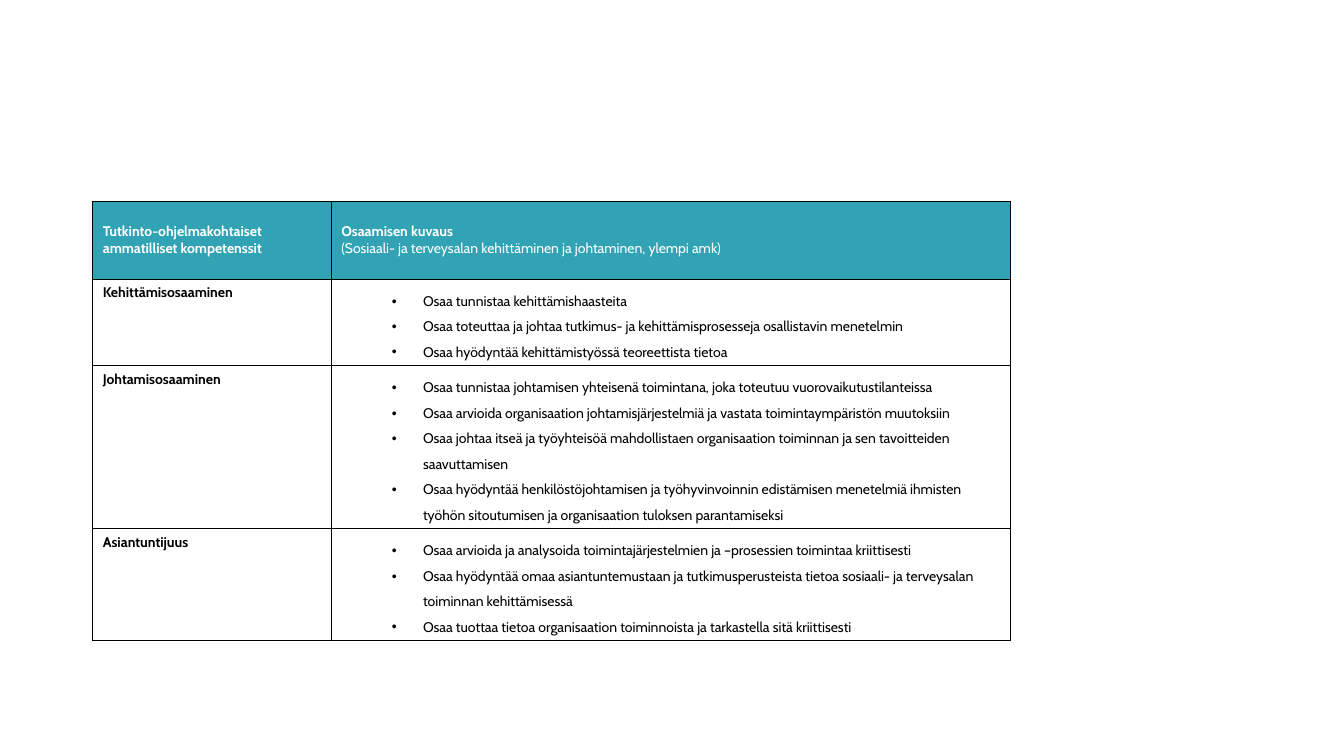
import pptx
import pptx.util
import pptx.dml.color
import pptx.enum.text
import pptx.oxml
import pptx.oxml.ns

WIDTH, HEIGHT = 13.33, 7.5
TEAL, WHITE, BLACK = "31A3B5", "FFFFFF", "000000"
COLUMN_SHARES = (0.26, 0.74)
TABLE_WIDTH = 9.1
LINE_HEIGHT = 0.25
CELL_PADDING = 0.1
HEADER_HEIGHT = 0.77

HEADER = (
    ["Tutkinto-ohjelmakohtaiset ammatilliset kompetenssit"],
    ["Osaamisen kuvaus", "(Sosiaali- ja terveysalan kehittäminen ja johtaminen, ylempi amk)"],
)
COMPETENCES = (
    ("Kehittämisosaaminen", 3, [
        "Osaa tunnistaa kehittämishaasteita",
        "Osaa toteuttaa ja johtaa tutkimus- ja kehittämisprosesseja osallistavin menetelmin",
        "Osaa hyödyntää kehittämistyössä teoreettista tietoa",
    ]),
    ("Johtamisosaaminen", 6, [
        "Osaa tunnistaa johtamisen yhteisenä toimintana, joka toteutuu vuorovaikutustilanteissa",
        "Osaa arvioida organisaation johtamisjärjestelmiä ja vastata toimintaympäristön muutoksiin",
        "Osaa johtaa itseä ja työyhteisöä mahdollistaen organisaation toiminnan ja sen tavoitteiden saavuttamisen",
        "Osaa hyödyntää henkilöstöjohtamisen ja työhyvinvoinnin edistämisen menetelmiä ihmisten työhön "
        "sitoutumisen ja organisaation tuloksen parantamiseksi",
    ]),
    ("Asiantuntijuus", 4, [
        "Osaa arvioida ja analysoida toimintajärjestelmien ja –prosessien toimintaa kriittisesti",
        "Osaa hyödyntää omaa asiantuntemustaan ja tutkimusperusteista tietoa sosiaali- ja terveysalan "
        "toiminnan kehittämisessä",
        "Osaa tuottaa tietoa organisaation toiminnoista ja tarkastella sitä kriittisesti",
    ]),
)


def color(value):
    return pptx.dml.color.RGBColor.from_string(value)


def add_borders(cell):
    properties = cell._tc.get_or_add_tcPr()
    for side in ("lnL", "lnR", "lnT", "lnB"):
        properties.append(pptx.oxml.parse_xml(
            f'<a:{side} {pptx.oxml.ns.nsdecls("a")} w="12700"><a:solidFill>'
            f'<a:srgbClr val="{BLACK}"/></a:solidFill></a:{side}>'))


def add_bullet(paragraph):
    paragraph.level = 1
    paragraph.line_spacing = 1.5
    properties = paragraph._p.get_or_add_pPr()
    properties.set("marL", str(pptx.util.Inches(0.81)))
    properties.set("indent", str(pptx.util.Inches(-0.31)))
    properties.append(pptx.oxml.parse_xml(
        f'<a:buFont {pptx.oxml.ns.nsdecls("a")} typeface="Arial"/>'))
    properties.append(pptx.oxml.parse_xml(
        f'<a:buChar {pptx.oxml.ns.nsdecls("a")} char="•"/>'))


def write_cell(cell, lines, text_color=BLACK, fill=None, bold_lines=0, bulleted=False):
    add_borders(cell)
    if fill:
        cell.fill.solid()
        cell.fill.fore_color.rgb = color(fill)
        cell.vertical_anchor = pptx.enum.text.MSO_ANCHOR.MIDDLE
    else:
        cell.fill.background()
    cell.text_frame.text = "\n".join(lines)
    for index, paragraph in enumerate(cell.text_frame.paragraphs):
        if bulleted:
            add_bullet(paragraph)
        run_format = {"name": "Cabin", "size": pptx.util.Pt(10), "bold": index < bold_lines}
        for run in paragraph.runs:
            for name, value in run_format.items():
                setattr(run.font, name, value)
            run.font.color.rgb = color(text_color)


def add_competence_table(slide):
    heights = [HEADER_HEIGHT] + [lines * LINE_HEIGHT + CELL_PADDING for _, lines, _ in COMPETENCES]
    table = slide.shapes.add_table(
        len(heights), len(COLUMN_SHARES), pptx.util.Inches(0.92), pptx.util.Inches(2),
        pptx.util.Inches(TABLE_WIDTH), pptx.util.Inches(sum(heights))).table
    for column, share in zip(table.columns, COLUMN_SHARES):
        column.width = pptx.util.Inches(TABLE_WIDTH * share)
    for row, height in zip(table.rows, heights):
        row.height = pptx.util.Inches(height)
    for column, lines in enumerate(HEADER):
        write_cell(table.cell(0, column), lines, WHITE, TEAL, bold_lines=1)
    for row, (title, _, skills) in enumerate(COMPETENCES, start=1):
        write_cell(table.cell(row, 0), [title], bold_lines=1)
        write_cell(table.cell(row, 1), skills, bulleted=True)


def main():
    presentation = pptx.Presentation()
    presentation.slide_width = pptx.util.Inches(WIDTH)
    presentation.slide_height = pptx.util.Inches(HEIGHT)
    slide = presentation.slides.add_slide(presentation.slide_layouts[6])
    add_competence_table(slide)
    presentation.save("out.pptx")


if __name__ == "__main__":
    main()
